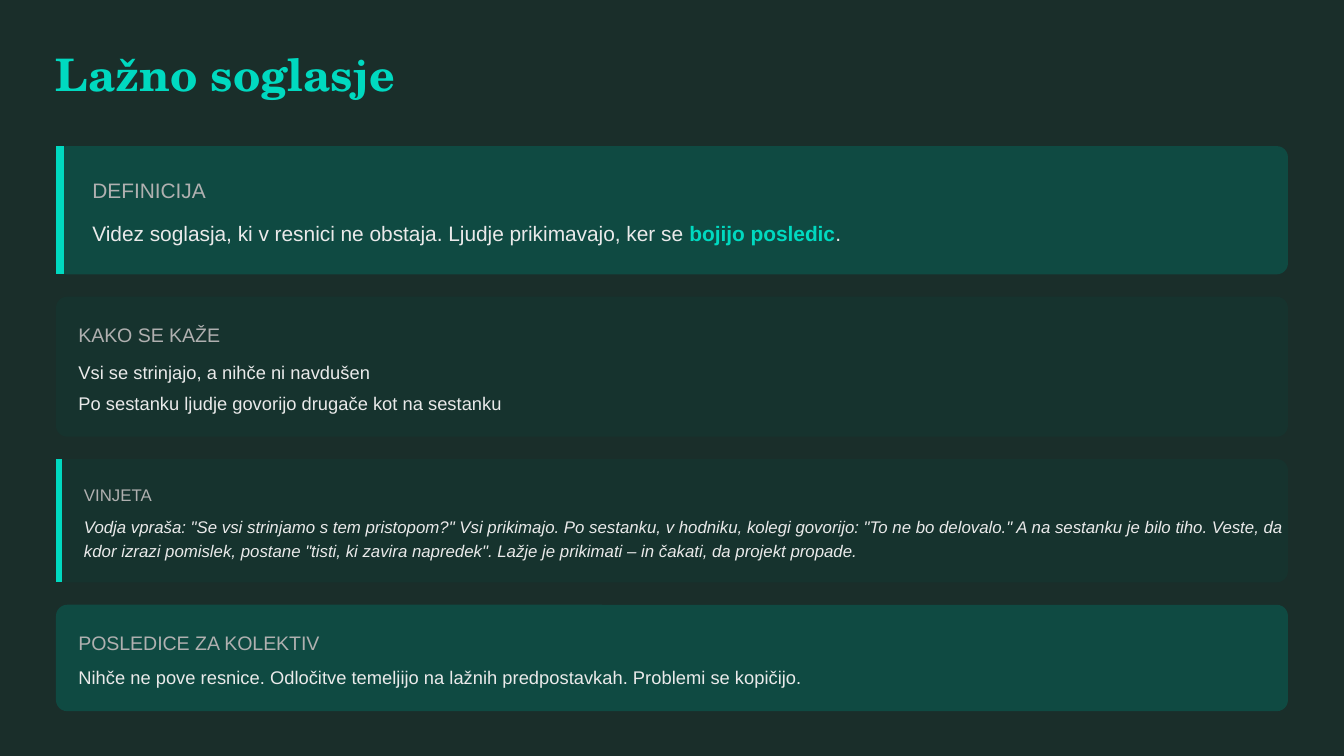
from lxml import etree
from pptx import Presentation
from pptx import util as u
from pptx.dml.color import RGBColor
from pptx.enum import shapes, text
from pptx.oxml.ns import qn

COLUMNS = 24
POINTS_PER_ROW = 30
LEFT, WIDTH, GAP, RADIUS = 1, 22, 0.4, 0.2
BACKDROP, DEEP, DIM = "1A2E2A", "0F4A42", "16332E"
ACCENT, MUTED, LIGHT = "00D9C0", "B0B0B0", "EAEAEA"


def color(code):
    return RGBColor.from_string(code)


class Deck:
    def __init__(self):
        self.presentation = Presentation()
        self.presentation.slide_width = u.Inches(10)
        self.presentation.slide_height = u.Inches(5.625)
        self.unit = self.presentation.slide_width / COLUMNS
        self.slide = self.presentation.slides.add_slide(self.presentation.slide_layouts[1])
        self.slide.background.fill.solid()
        self.slide.background.fill.fore_color.rgb = color(BACKDROP)

    def span(self, *cells):
        return [round(cell * self.unit) for cell in cells]

    def place(self, holder, *cells):
        holder.left, holder.top, holder.width, holder.height = self.span(*cells)

    def typeset(self, frame, lines, size, leading, shade, after=0, font="Arial", bold=False, italic=False):
        frame.word_wrap = True
        frame.auto_size = text.MSO_AUTO_SIZE.NONE
        frame.vertical_anchor = text.MSO_ANCHOR.TOP
        frame.margin_left = frame.margin_top = frame.margin_right = frame.margin_bottom = 0
        for index, line in enumerate(lines):
            paragraph = frame.add_paragraph() if index else frame.paragraphs[0]
            paragraph.alignment = text.PP_ALIGN.LEFT
            paragraph.line_spacing = u.Pt(leading)
            paragraph.space_before = u.Pt(0)
            paragraph.space_after = u.Pt(after if index < len(lines) - 1 else 0)
            for part, words in enumerate(line.split("*")):
                run = paragraph.add_run()
                run.text = words
                run.font.name = font
                run.font.size = u.Pt(size)
                run.font.bold = bold or part % 2 == 1
                run.font.italic = italic
                run.font.color.rgb = color(ACCENT if part % 2 else shade)

    def title(self, words):
        heading = self.slide.shapes.title
        self.place(heading, LEFT, 1, WIDTH, 0.8)
        self.typeset(heading.text_frame, [words], 24, 24, ACCENT, font="TeX Gyre Schola", bold=True)

    def card(self, top, height, fill):
        panel = self.slide.shapes.add_shape(
            shapes.MSO_SHAPE.ROUNDED_RECTANGLE, *self.span(LEFT, top, WIDTH, height))
        panel.adjustments[0] = RADIUS / height
        panel.shadow.inherit = False
        panel.fill.solid()
        panel.fill.fore_color.rgb = color(fill)
        panel.line.fill.background()

    def bar(self, top, height, weight):
        x = LEFT + weight / 2 / POINTS_PER_ROW
        edge = self.slide.shapes.add_connector(
            shapes.MSO_CONNECTOR.STRAIGHT, *self.span(x, top, x, top + height))
        edge.line.color.rgb = color(ACCENT)
        edge.line.width = u.Pt(weight)
        etree.SubElement(edge._element.spPr, qn("a:effectLst"))

    def words(self, x, y, line, size, leading, shade, rows=1, italic=False):
        box = self.slide.shapes.add_textbox(
            *self.span(x, y, LEFT + WIDTH - x, rows * leading / POINTS_PER_ROW))
        self.typeset(box.text_frame, [line], size, leading, shade, italic=italic)

    def items(self, x, y, lines, size, leading, after):
        body = self.slide.placeholders[1]
        height = (len(lines) * (leading + after) - after) / POINTS_PER_ROW
        self.place(body, x, y, LEFT + WIDTH - x, height)
        self.typeset(body.text_frame, lines, size, leading, LIGHT, after)
        for paragraph in body.text_frame.paragraphs:
            properties = paragraph._p.get_or_add_pPr()
            properties.set("marL", "0")
            properties.set("indent", "0")
            etree.SubElement(properties, qn("a:buNone"))
        self.slide.shapes._spTree.append(body._element)

    def section(self, top, height, fill, label, lines, inset, pad, label_style, line_style,
                gap, weight=0, rows=1, italic=False):
        self.card(top, height, fill)
        if weight:
            self.bar(top, height, weight)
        x, y = LEFT + inset, top + pad
        self.words(x, y, label, *label_style, MUTED)
        y += (label_style[1] + gap) / POINTS_PER_ROW
        if len(lines) > 1:
            self.items(x, y, lines, *line_style, after=3)
        else:
            self.words(x, y, lines[0], *line_style, LIGHT, rows, italic)


SECTIONS = [
    dict(height=2.29, fill=DEEP, label="DEFINICIJA", inset=0.65, pad=0.49, gap=6, weight=4.5,
         label_style=(11.2, 15.8), line_style=(11.2, 16.9),
         lines=["Videz soglasja, ki v resnici ne obstaja. Ljudje prikimavajo, ker se *bojijo posledic*."]),
    dict(height=2.5, fill=DIM, label="KAKO SE KAŽE", inset=0.4, pad=0.4, gap=6,
         label_style=(10.5, 14.7), line_style=(9.8, 13.7),
         lines=["Vsi se strinjajo, a nihče ni navdušen",
                "Po sestanku ljudje govorijo drugače kot na sestanku"]),
    dict(height=2.2, fill=DIM, label="VINJETA", inset=0.5, pad=0.4, gap=4.5, weight=3,
         label_style=(9, 12.6), line_style=(9, 12.6), rows=2, italic=True,
         lines=['Vodja vpraša: "Se vsi strinjamo s tem pristopom?" Vsi prikimajo. Po sestanku, '
                'v hodniku, kolegi govorijo: "To ne bo delovalo." A na sestanku je bilo tiho. '
                'Veste, da kdor izrazi pomislek, postane "tisti, ki zavira napredek". '
                'Lažje je prikimati – in čakati, da projekt propade.']),
    dict(height=1.9, fill=DEEP, label="POSLEDICE ZA KOLEKTIV", inset=0.4, pad=0.4, gap=4.5,
         label_style=(10.5, 14.7), line_style=(9.8, 13.7),
         lines=["Nihče ne pove resnice. Odločitve temeljijo na lažnih predpostavkah. Problemi se kopičijo."]),
]


def main():
    deck = Deck()
    deck.title("Lažno soglasje")
    top = 2.61
    for section in SECTIONS:
        deck.section(top, **section)
        top += section["height"] + GAP
    deck.presentation.save("out.pptx")


if __name__ == "__main__":
    main()
